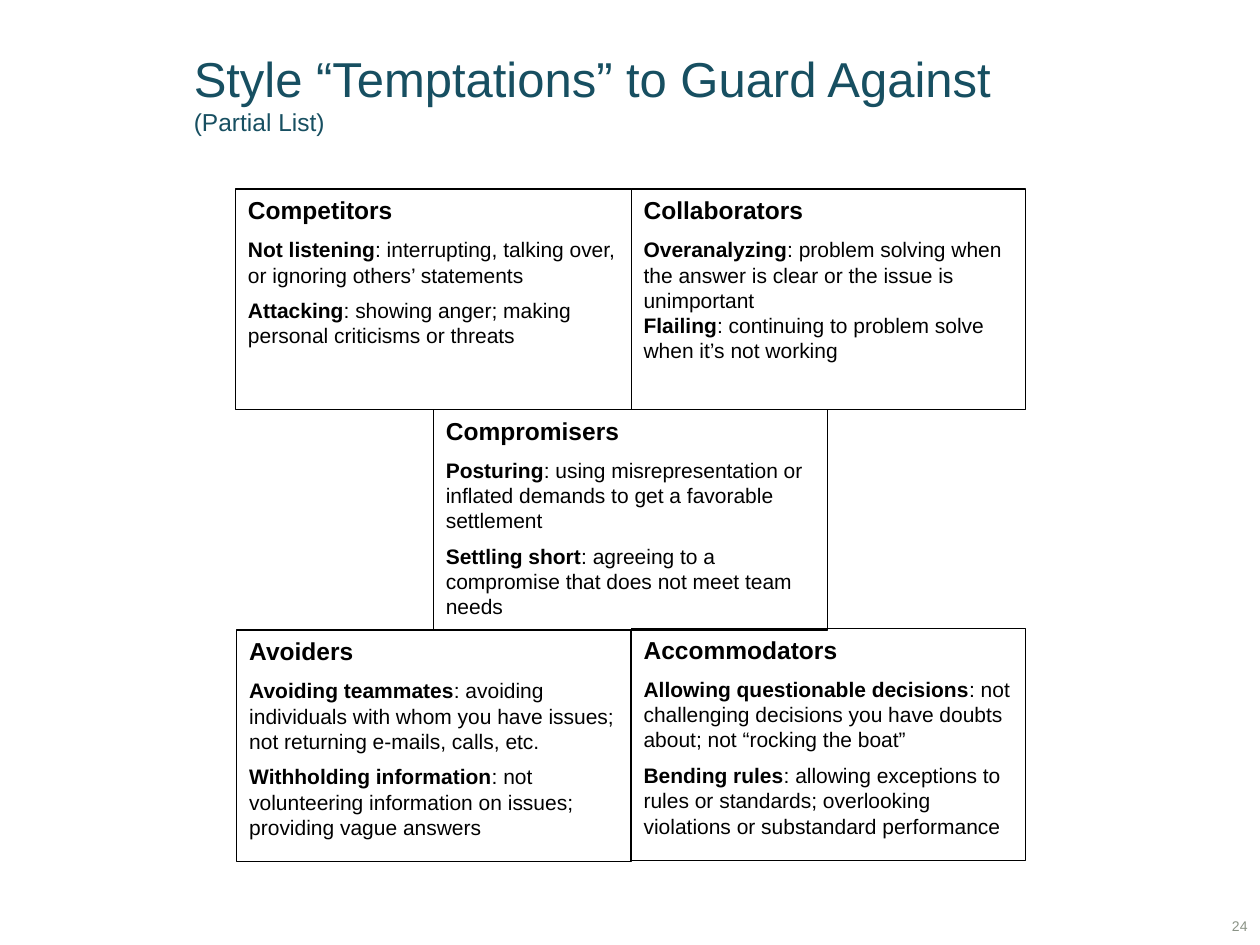
from dataclasses import dataclass

from pptx import Presentation
from pptx.dml.color import RGBColor
from pptx.enum.shapes import MSO_SHAPE
from pptx.enum.text import MSO_ANCHOR, PP_ALIGN
from pptx.util import Inches, Pt

RECT = MSO_SHAPE.RECTANGLE
TOP, MIDDLE = MSO_ANCHOR.TOP, MSO_ANCHOR.MIDDLE
LEFT, RIGHT = PP_ALIGN.LEFT, PP_ALIGN.RIGHT


@dataclass(frozen=True)
class Theme:
    """Colours and type sizes of the slide."""
    font: str = "Arial"
    teal: RGBColor = RGBColor(0x17, 0x4F, 0x61)
    gray: RGBColor = RGBColor(0x8A, 0x93, 0x86)
    black: RGBColor = RGBColor(0, 0, 0)
    white: RGBColor = RGBColor(255, 255, 255)
    title: int = 28
    head: int = 14
    body: int = 12
    small: int = 8
    rule: float = 0.75


THEME = Theme()

STYLES = [
    ((1.87, 1.5, 3.14, 1.75), "Competitors", THEME.white, 6, [
        ("Not listening", ": interrupting, talking over, or ignoring others’ statements"),
        ("Attacking", ": showing anger; making personal criticisms or threats")]),
    ((5.01, 1.5, 3.13, 1.75), "Collaborators", None, 0, [
        ("Overanalyzing", ": problem solving when the answer is clear or the issue is unimportant"),
        ("Flailing", ": continuing to problem solve when it’s not working")]),
    ((3.44, 3.25, 3.13, 1.75), "Compromisers", None, 6, [
        ("Posturing", ": using misrepresentation or inflated demands to get a favorable settlement"),
        ("Settling short", ": agreeing to a compromise that does not meet team needs")]),
    ((1.88, 5, 3.13, 1.84), "Avoiders", None, 6, [
        ("Avoiding teammates", ": avoiding individuals with whom you have issues; "
                               "not returning e-mails, calls, etc."),
        ("Withholding information", ": not volunteering information on issues; "
                                    "providing vague answers")]),
    ((5.01, 4.99, 3.13, 1.84), "Accommodators", None, 6, [
        ("Allowing questionable decisions", ": not challenging decisions you have doubts about; "
                                            "not “rocking the boat”"),
        ("Bending rules", ": allowing exceptions to rules or standards; "
                          "overlooking violations or substandard performance")]),
]


def add_run(para, text, size, color, bold=False):
    """Add one styled run to a paragraph."""
    run = para.add_run()
    run.text = text
    font = run.font
    font.name, font.size, font.bold = THEME.font, Pt(size), bold
    font.color.rgb = color


def add_text(slide, box, anchor=TOP):
    """Add a wrapping text box and return its first paragraph."""
    frame = slide.shapes.add_textbox(*map(Inches, box)).text_frame
    frame.word_wrap = True
    frame.vertical_anchor = anchor
    return frame.paragraphs[0]


def add_title(slide, box):
    """Place the title with its smaller second line."""
    para = add_text(slide, box, MIDDLE)
    add_run(para, "Style “Temptations” to Guard Against", THEME.title, THEME.teal)
    para.add_line_break()
    add_run(para, "(Partial List)", THEME.head, THEME.teal)


def add_number(slide, box):
    """Place the slide number."""
    para = add_text(slide, box)
    para.alignment = RIGHT
    add_run(para, "24", THEME.small, THEME.gray)


def add_style(slide, box, name, fill, gap, traps):
    """Place one framed style with its heading and temptations."""
    shape = slide.shapes.add_shape(RECT, *map(Inches, box))
    shape.shadow.inherit = False
    if fill is None:
        shape.fill.background()
    else:
        shape.fill.solid()
        shape.fill.fore_color.rgb = fill
    shape.line.color.rgb = THEME.black
    shape.line.width = Pt(THEME.rule)
    frame = shape.text_frame
    frame.word_wrap = True
    frame.vertical_anchor = TOP
    head = frame.paragraphs[0]
    head.alignment = LEFT
    head.space_after = Pt(THEME.head / 2)
    add_run(head, name, THEME.head, THEME.black, True)
    for term, note in traps:
        para = frame.add_paragraph()
        para.alignment = LEFT
        para.space_after = Pt(gap)
        add_run(para, term, THEME.body, THEME.black, True)
        add_run(para, note, THEME.body, THEME.black)


def main():
    """Build and save the slide."""
    deck = Presentation()
    deck.slide_width, deck.slide_height = Inches(10), Inches(7.5)
    slide = deck.slides.add_slide(deck.slide_layouts[6])
    add_title(slide, (1.44, 0.22, 8.3, 1.03))
    add_number(slide, (9, 7.23, 1, 0.27))
    for style in STYLES:
        add_style(slide, *style)
    deck.save("out.pptx")


if __name__ == "__main__":
    main()
